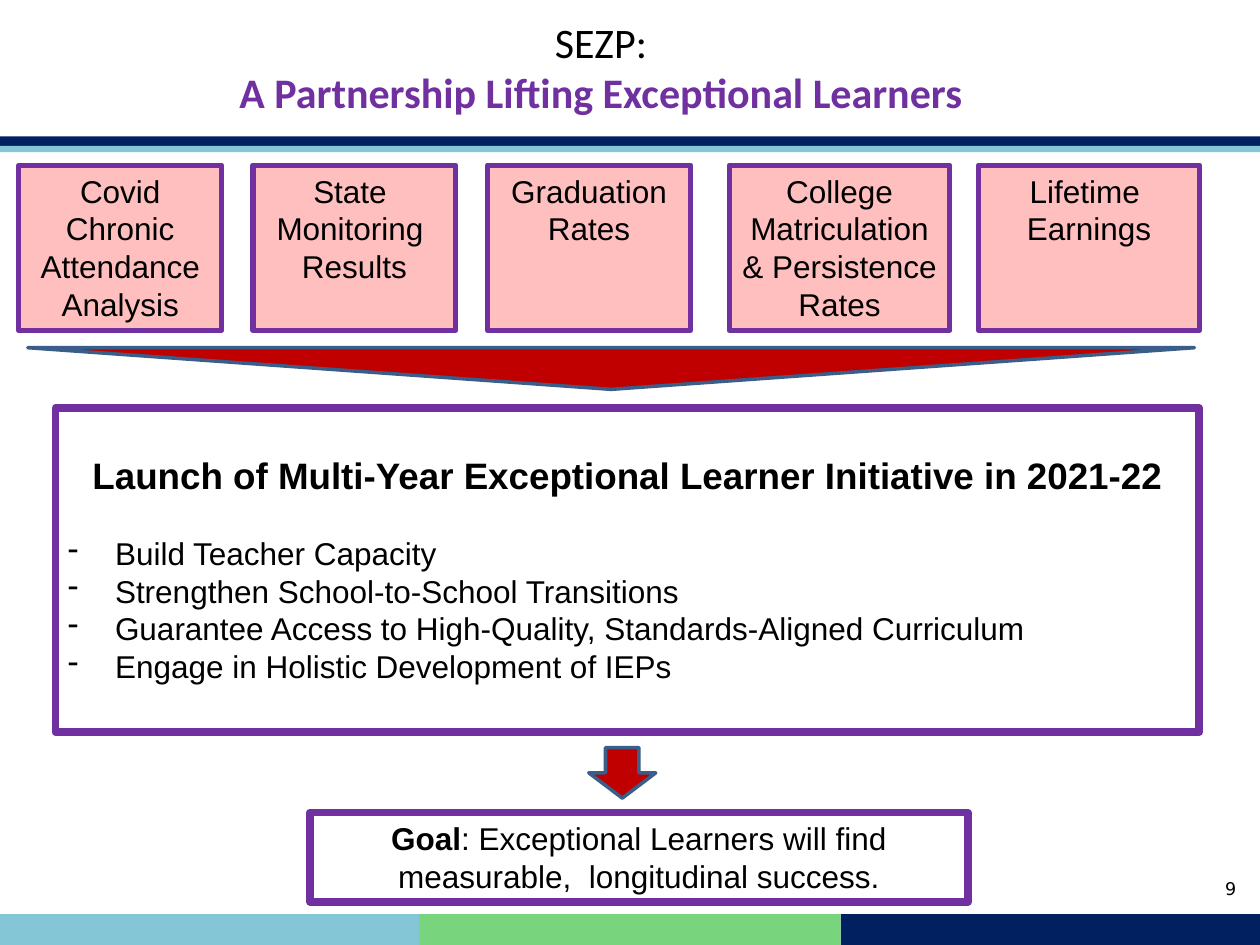
from lxml import etree
from pptx import Presentation
from pptx.dml.color import RGBColor
from pptx.enum.shapes import MSO_SHAPE
from pptx.enum.text import MSO_ANCHOR, MSO_AUTO_SIZE, PP_ALIGN
from pptx.oxml.ns import qn
from pptx.util import Cm, Pt

RECTANGLE = MSO_SHAPE.RECTANGLE
MERGE = MSO_SHAPE.FLOWCHART_MERGE
DOWN_ARROW = MSO_SHAPE.DOWN_ARROW
TOP = MSO_ANCHOR.TOP
NO_AUTOFIT = MSO_AUTO_SIZE.NONE
LEFT, CENTER, RIGHT = PP_ALIGN.LEFT, PP_ALIGN.CENTER, PP_ALIGN.RIGHT

NAVY, SKY, GREEN = "002060", "84C5D6", "79D57D"
PURPLE, PINK, RED, STEEL, BLACK = "7030A0", "FFBFBF", "C00000", "395E89", "000000"

CARDS = [
    (0.38, 4.09, ["Covid Chronic Attendance Analysis"]),
    (5.1, 4.09, ["State ", "Monitoring ", "Results"]),
    (9.83, 4.09, ["Graduation Rates"]),
    (14.7, 4.45, ["College Matriculation & Persistence", "Rates"]),
    (19.73, 4.45, ["Lifetime ", "Earnings"]),
]
ACTIONS = [
    "Build Teacher Capacity",
    "Strengthen School-to-School Transitions",
    "Guarantee Access to High-Quality, Standards-Aligned Curriculum",
    "Engage in Holistic Development of IEPs",
]


def color(hex_string):
    return RGBColor.from_string(hex_string)


class SlideBuilder:
    body = {"name": "Arial", "size": Pt(18), "bold": False}

    def __init__(self, slide):
        self.slide = slide

    def box(self, left, top, width, height, fill=None, line=None, weight=0, kind=RECTANGLE):
        shape = self.slide.shapes.add_shape(kind, Cm(left), Cm(top), Cm(width), Cm(height))
        shape.shadow.inherit = False
        if fill:
            shape.fill.solid()
            shape.fill.fore_color.rgb = color(fill)
        else:
            shape.fill.background()
        if line:
            shape.line.color.rgb = color(line)
            shape.line.width = Pt(weight)
        else:
            shape.line.fill.background()
        return shape

    def frame(self, shape, margin_top=0.13):
        settings = {
            "word_wrap": True,
            "auto_size": NO_AUTOFIT,
            "vertical_anchor": TOP,
            "margin_left": Cm(0.25),
            "margin_right": Cm(0.25),
            "margin_top": Cm(margin_top),
            "margin_bottom": Cm(0.13),
        }
        for name, value in settings.items():
            setattr(shape.text_frame, name, value)
        return shape.text_frame

    def paragraph(self, text_frame, runs, alignment=CENTER, space_before=0):
        paragraph = text_frame.paragraphs[0]
        if paragraph.runs:
            paragraph = text_frame.add_paragraph()
        paragraph.alignment = alignment
        paragraph.space_before = Pt(space_before)
        for text, changes in runs:
            run = paragraph.add_run()
            run.text = text
            style = {**self.body, **changes}
            run.font.color.rgb = color(style.pop("color", BLACK))
            for name, value in style.items():
                setattr(run.font, name, value)
        return paragraph

    def bullet(self, text_frame, text, space_before=0):
        paragraph = self.paragraph(text_frame, [(text, {})], LEFT, space_before)
        properties = paragraph._p.get_or_add_pPr()
        properties.set("marL", str(Cm(0.95)))
        properties.set("indent", str(Cm(-0.95)))
        etree.SubElement(properties, qn("a:buChar")).set("char", "-")

    def title(self, first, second):
        shape = self.slide.shapes.title
        place = {"left": 0.56, "top": 0.2, "width": 23.11, "height": 2.31}
        for name, value in place.items():
            setattr(shape, name, Cm(value))
        text_frame = self.frame(shape)
        style = {"name": "Calibri", "size": Pt(24)}
        self.paragraph(text_frame, [(first, style)])
        self.paragraph(text_frame, [(second, {**style, "bold": True, "color": PURPLE})])

    def page_number(self, number):
        shape = self.slide.shapes.add_textbox(Cm(19.25), Cm(17.58), Cm(5.92), Cm(1.27))
        style = {"name": "DejaVu Sans", "size": Pt(10)}
        self.paragraph(self.frame(shape), [(number, style)], RIGHT)

    def card(self, left, width, lines):
        text_frame = self.frame(self.box(left, 3.33, width, 3.33, PINK, PURPLE, 3))
        for line in lines:
            self.paragraph(text_frame, [(line, {})])


def main():
    presentation = Presentation()
    presentation.slide_width = Cm(25.4)
    presentation.slide_height = Cm(19.05)
    slide = presentation.slides.add_slide(presentation.slide_layouts[5])
    builder = SlideBuilder(slide)

    for left, right, fill in [(0, 8.45, SKY), (8.45, 16.95, GREEN), (16.95, 25.4, NAVY)]:
        builder.box(left, 18.43, right - left, 0.62, fill)
    builder.box(0, 2.75, 25.4, 0.2, NAVY)
    builder.box(0, 2.94, 25.4, 0.13, SKY)
    builder.page_number("9")
    builder.title("SEZP:", "A Partnership Lifting Exceptional Learners")

    for left, width, lines in CARDS:
        builder.card(left, width, lines)
    builder.box(0.56, 7.01, 23.52, 0.84, RED, STEEL, 2, MERGE)

    initiative = builder.frame(builder.box(1.12, 8.23, 23.06, 6.53, None, PURPLE, 4.5), 0.9)
    heading = "Launch of Multi-Year Exceptional Learner Initiative in 2021-22"
    builder.paragraph(initiative, [(heading, {"size": Pt(21), "bold": True})])
    for index, action in enumerate(ACTIONS):
        builder.bullet(initiative, action, 0 if index else 21)

    builder.box(11.87, 15.07, 1.35, 1.02, RED, STEEL, 2, DOWN_ARROW)
    goal = builder.frame(builder.box(6.25, 16.38, 13.26, 1.8, None, PURPLE, 4.5))
    builder.paragraph(goal, [
        ("Goal", {"bold": True}),
        (": Exceptional Learners will find measurable,  longitudinal success.", {}),
    ])

    presentation.save("out.pptx")


if __name__ == "__main__":
    main()
